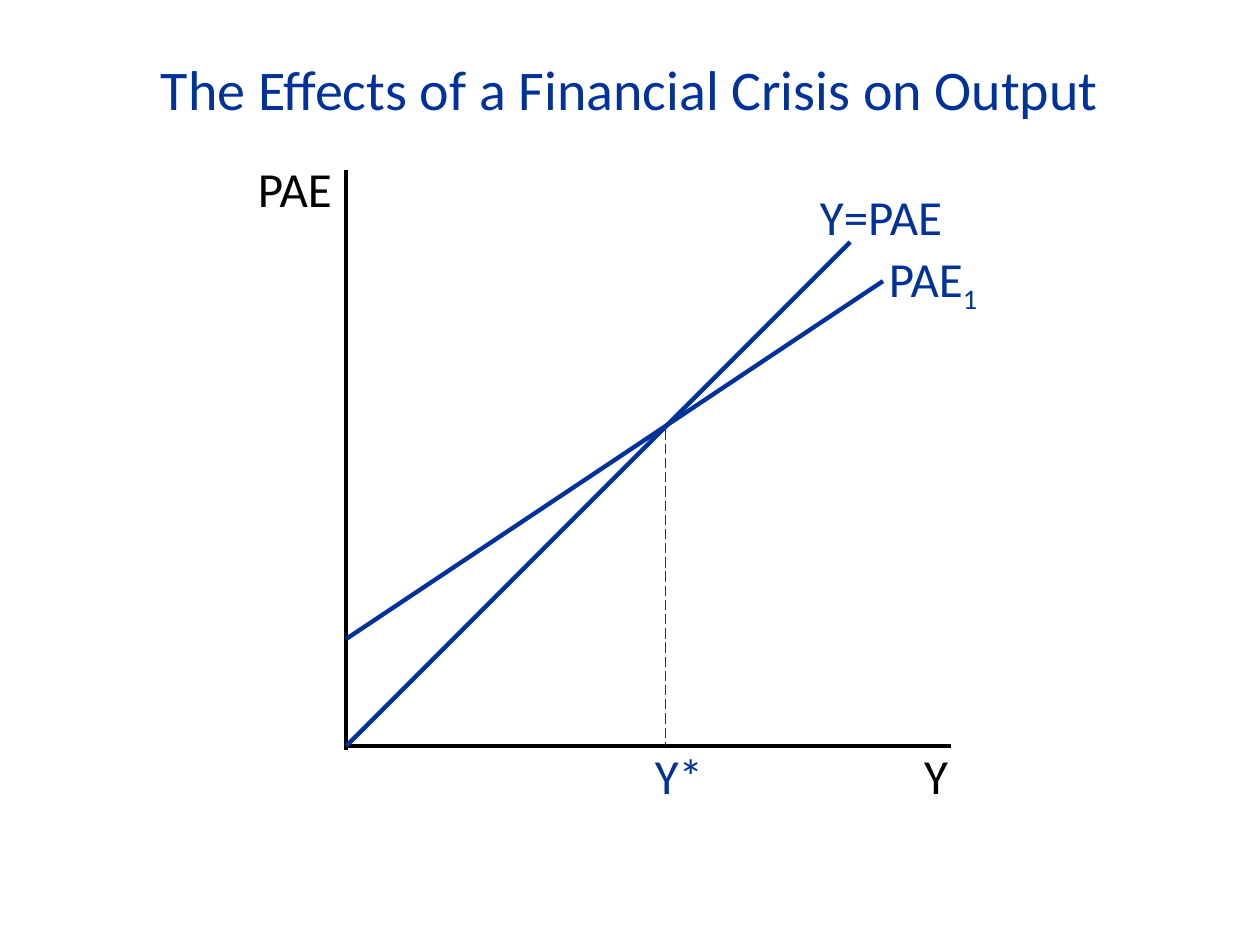
from lxml import etree
from pptx import Presentation
from pptx.dml.color import RGBColor
from pptx.enum.dml import MSO_LINE
from pptx.enum.shapes import MSO_CONNECTOR
from pptx.enum.text import MSO_ANCHOR, PP_ALIGN
from pptx.oxml.ns import qn
from pptx.util import Cm, Pt

STRAIGHT = MSO_CONNECTOR.STRAIGHT
LONG_DASH = MSO_LINE.LONG_DASH
MIDDLE, TOP = MSO_ANCHOR.MIDDLE, MSO_ANCHOR.TOP
CENTER, LEFT = PP_ALIGN.CENTER, PP_ALIGN.LEFT
BLUE, BLACK = "003399", "000000"


def color(value):
    """Turn a hex string into a colour."""
    return RGBColor.from_string(value)


def apply(target, formats):
    """Set each attribute of the target from a dict of format values."""
    for name, value in formats.items():
        setattr(target, name, value)


def add_span(para, text, size, ink, baseline=None):
    """Add a run of formatted text to a paragraph."""
    span = para.add_run()
    span.text = text
    apply(span.font, {"name": "Calibri", "size": Pt(size)})
    span.font.color.rgb = color(ink)
    if baseline:
        span.font._element.set("baseline", str(baseline))


def add_title(page, box, text):
    """Place and format the title placeholder in its box."""
    title = page.shapes.title
    apply(title, dict(zip(("left", "top", "width", "height"), map(Cm, box))))
    apply(title.text_frame, {"word_wrap": True, "vertical_anchor": MIDDLE})
    para = title.text_frame.paragraphs[0]
    para.alignment = CENTER
    add_span(para, text, 32, BLUE)


def add_line(page, start, end, ink, width=2.5, dash=None):
    """Draw a straight line between two points in centimetres."""
    line = page.shapes.add_connector(STRAIGHT, *map(Cm, (*start, *end)))
    apply(line.line, {"width": Pt(width), "dash_style": dash})
    line.line.color.rgb = color(ink)
    etree.SubElement(line._element.spPr, qn("a:effectLst"))


def add_label(page, box, text, ink, subscript="", spacing=1.0):
    """Write a label, with an optional subscript, in its box."""
    frame = page.shapes.add_textbox(*map(Cm, box)).text_frame
    apply(frame, {"word_wrap": True, "vertical_anchor": TOP})
    para = frame.paragraphs[0]
    apply(para, {"alignment": LEFT, "line_spacing": spacing})
    add_span(para, text, 28, ink)
    if subscript:
        add_span(para, subscript, 28, ink, -25000)


def add_diagram(page, box):
    """Draw the expenditure diagram, its curves and its labels in the box."""
    left, top, width, height = box
    bottom = top + height
    reach, intercept, slope = 10.16, 2.16, 2 / 3
    crossing = intercept / (1 - slope)
    spending_end = 10.82

    def point(output, spending):
        """Map output and spending to a position on the page."""
        return left + output, bottom - spending

    lines = [
        (point(0, height), point(0, -0.07), BLACK),
        (point(0, 0), point(width, 0), BLACK),
        (point(0, intercept), point(spending_end, intercept + slope * spending_end), BLUE),
        (point(0, 0), point(reach, reach), BLUE),
        (point(crossing - 0.05, crossing - 0.1), point(crossing - 0.05, 0), BLUE, 0.75, LONG_DASH),
    ]
    for line in lines:
        add_line(page, *line)

    axis_label_top = bottom - 0.13
    labels = [
        ((left + 11.4, axis_label_top, 1.24, 1.45), "Y", BLACK),
        ((left + 5.97, axis_label_top, 1.68, 1.45), "Y*", BLUE),
        ((left + 10.69, top + 1.45, 2.44, 1.45), "PAE", BLUE, "1"),
        ((left + 9.3, top + 0.2, 3.18, 1.45), "Y=PAE", BLUE),
        ((left - 2.03, top - 0.13, 2.08, 1.24), "PAE", BLACK, "", 0.8),
    ]
    for label in labels:
        add_label(page, *label)


def main():
    """Build the slide and save the deck."""
    deck = Presentation()
    apply(deck, {"slide_width": Cm(25.4), "slide_height": Cm(19.05)})
    page = deck.slides.add_slide(deck.slide_layouts[5])
    add_title(page, (1.78, 0.97, 21.84, 1.63), "The Effects of a Financial Crisis on Output")
    add_diagram(page, (6.98, 3.43, 12.19, 11.61))
    deck.save("out.pptx")


if __name__ == "__main__":
    main()
